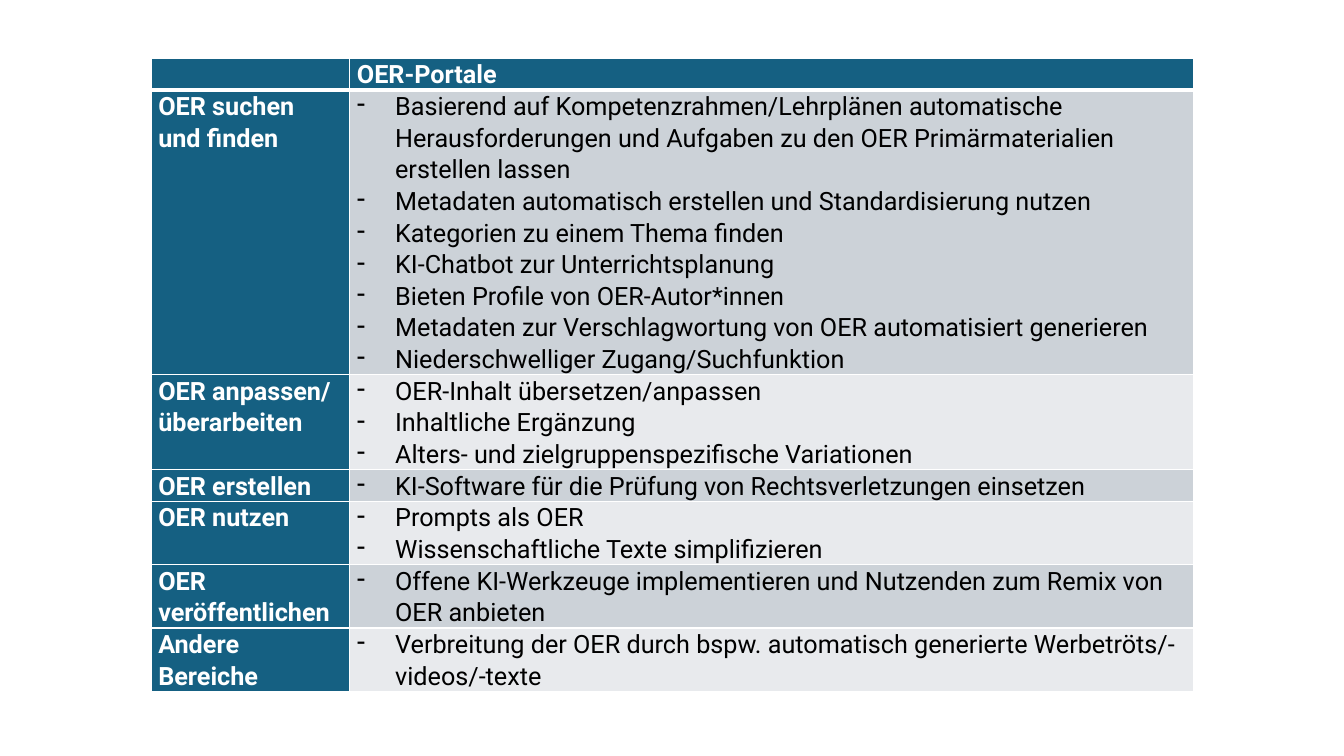
import pptx
import pptx.util
import pptx.dml.color
import pptx.oxml.ns
from lxml import etree

Inches, Pt = pptx.util.Inches, pptx.util.Pt
RGBColor = pptx.dml.color.RGBColor

BLUE = RGBColor(0x15, 0x60, 0x82)
GREY = RGBColor(0xCC, 0xD2, 0xD8)
LIGHT = RGBColor(0xE8, 0xEA, 0xED)
WHITE = RGBColor(0xFF, 0xFF, 0xFF)
BLACK = RGBColor(0, 0, 0)

LINE_HEIGHT = 0.31

# Each area: heading, number of text lines, ideas for the OER portals
areas = [
    ("OER suchen und finden", 9, [
        "Basierend auf Kompetenzrahmen/Lehrplänen automatische Herausforderungen "
        "und Aufgaben zu den OER Primärmaterialien erstellen lassen",
        "Metadaten automatisch erstellen und Standardisierung nutzen",
        "Kategorien zu einem Thema finden",
        "KI-Chatbot zur Unterrichtsplanung",
        "Bieten Profile von OER-Autor*innen",
        "Metadaten zur Verschlagwortung von OER automatisiert generieren",
        "Niederschwelliger Zugang/Suchfunktion",
    ]),
    ("OER anpassen/ überarbeiten", 3, [
        "OER-Inhalt übersetzen/anpassen",
        "Inhaltliche Ergänzung",
        "Alters- und zielgruppenspezifische Variationen",
    ]),
    ("OER erstellen", 1, ["KI-Software für die Prüfung von Rechtsverletzungen einsetzen"]),
    ("OER nutzen", 2, ["Prompts als OER", "Wissenschaftliche Texte simplifizieren"]),
    ("OER veröffentlichen", 2, [
        "Offene KI-Werkzeuge implementieren und Nutzenden zum Remix von OER anbieten",
    ]),
    ("Andere Bereiche", 2, [
        "Verbreitung der OER durch bspw. automatisch generierte Werbetröts/-videos/-texte",
    ]),
]


def format_cell(cell, fill, top=1, bottom=1):
    """Set insets, white borders and fill of a cell."""
    cell.margin_left = cell.margin_right = Inches(0.07)
    cell.margin_top = cell.margin_bottom = 0
    properties = cell._tc.get_or_add_tcPr()
    for side, width in (("L", 1), ("R", 1), ("T", top), ("B", bottom)):
        border = etree.SubElement(properties, pptx.oxml.ns.qn(f"a:ln{side}"), w=str(Pt(width)))
        solid = etree.SubElement(border, pptx.oxml.ns.qn("a:solidFill"))
        etree.SubElement(solid, pptx.oxml.ns.qn("a:srgbClr"), val=str(WHITE))
    cell.fill.solid()
    cell.fill.fore_color.rgb = fill


def write_cell(cell, texts, color, bold=False, bullets=False):
    """Write one paragraph per text, with dashes if wanted."""
    for number, text in enumerate(texts):
        frame = cell.text_frame
        paragraph = frame.add_paragraph() if number else frame.paragraphs[0]
        paragraph.line_spacing = 1.07
        paragraph.space_after = Pt(8 if number == len(texts) - 1 else 0)
        if bullets:
            properties = paragraph._p.get_or_add_pPr()
            properties.set("marL", str(Inches(0.38)))
            properties.set("indent", str(-Inches(0.38)))
            etree.SubElement(properties, pptx.oxml.ns.qn("a:buChar"), char="-")
        run = paragraph.add_run()
        run.text = text
        run.font.name = "Roboto"
        run.font.size = Pt(18)
        run.font.bold = bold
        run.font.color.rgb = color


# Slide
presentation = pptx.Presentation()
presentation.slide_width = Inches(13.33)
presentation.slide_height = Inches(7.5)
slide = presentation.slides.add_slide(presentation.slide_layouts[6])

# Table
line_counts = [1] + [lines for _, lines, _ in areas]
portal_table = slide.shapes.add_table(
    len(line_counts), 2, Inches(1.5), Inches(0.58),
    Inches(10.34), Inches(LINE_HEIGHT * sum(line_counts))).table
portal_table.first_col = True
portal_table.columns[0].width = Inches(1.97)
portal_table.columns[1].width = Inches(8.37)
for row, lines in zip(portal_table.rows, line_counts):
    row.height = Inches(LINE_HEIGHT * lines)

# Header row
for column in range(2):
    format_cell(portal_table.cell(0, column), BLUE, bottom=3)
portal_table.cell(0, 0).text_frame.paragraphs[0].font.size = Pt(18)
write_cell(portal_table.cell(0, 1), ["OER-Portale"], WHITE, bold=True)

# Area rows with alternating shades
for index, (area, _, ideas) in enumerate(areas, start=1):
    top_border = 3 if index == 1 else 1
    area_cell, ideas_cell = portal_table.cell(index, 0), portal_table.cell(index, 1)
    format_cell(area_cell, BLUE, top=top_border)
    write_cell(area_cell, [area], WHITE, bold=True)
    format_cell(ideas_cell, GREY if index % 2 else LIGHT, top=top_border)
    write_cell(ideas_cell, ideas, BLACK, bullets=True)

presentation.save("out.pptx")
